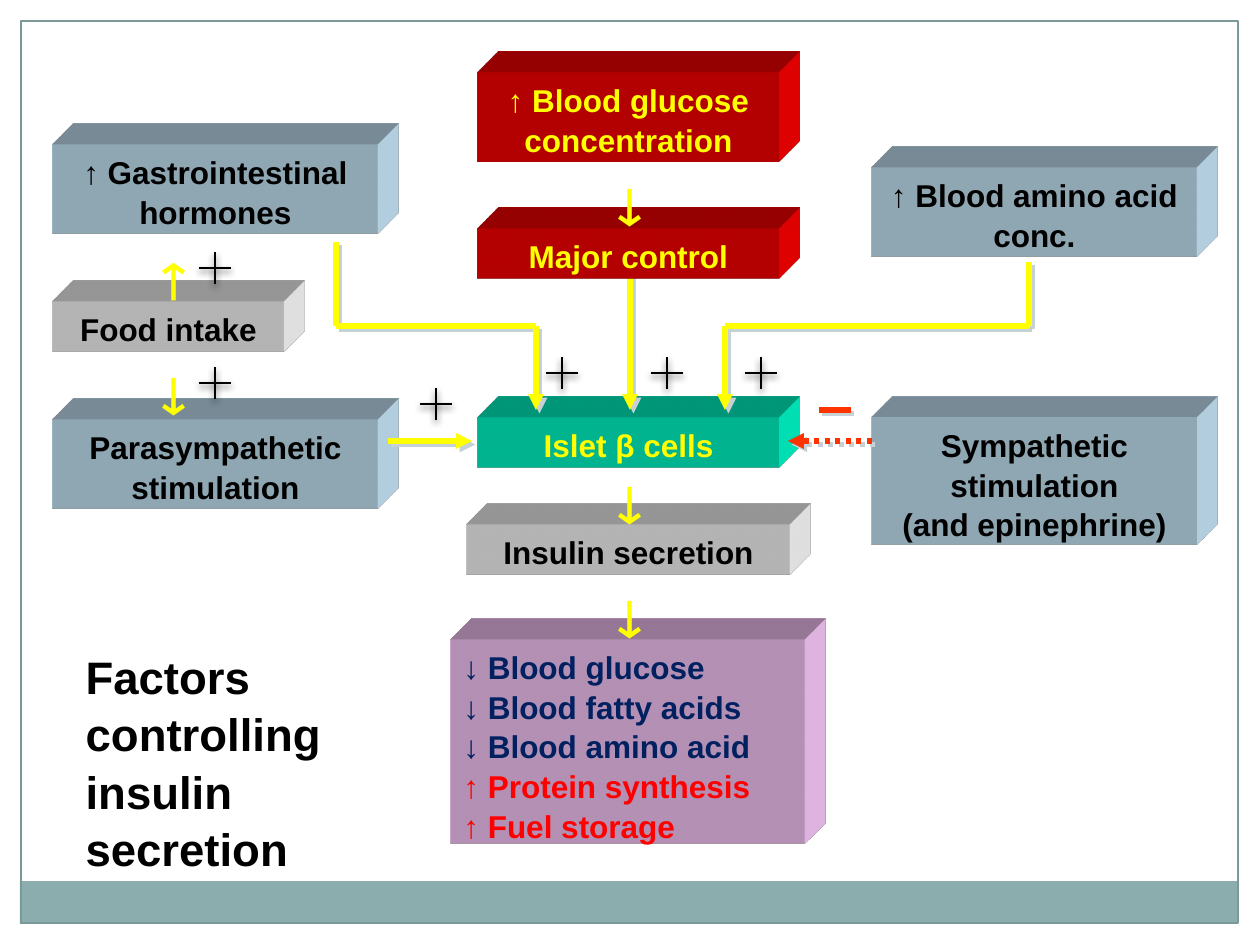
from lxml.etree import SubElement
from pptx import Presentation
from pptx.dml.color import RGBColor
from pptx.enum.dml import MSO_LINE
from pptx.enum.shapes import MSO_CONNECTOR, MSO_SHAPE
from pptx.enum.text import MSO_ANCHOR, MSO_AUTO_SIZE, PP_ALIGN
from pptx.oxml import parse_xml
from pptx.oxml.ns import nsdecls, qn
from pptx.util import Pt

SCALE = 914400 / 126
BLACK, YELLOW, RED, NAVY = "000000", "FFFF00", "FF0000", "002060"
BLUE, WHITE, TEAL, PINK, ORANGE = "CCECFF", "FFFFFF", "00FFCC", "FFCCFF", "FF3300"


def px(*vals):
    return [round(v * SCALE) for v in vals]


def color(code):
    return RGBColor.from_string(code)


def style(frame, hues, size=18, face="Arial", align=PP_ALIGN.LEFT, space=1.05):
    frame.auto_size = MSO_AUTO_SIZE.SHAPE_TO_FIT_TEXT
    frame.vertical_anchor = MSO_ANCHOR.TOP
    for i, para in enumerate(frame.paragraphs):
        para.alignment = align
        para.line_spacing = space
        for run in para.runs:
            run.font.size = Pt(size)
            run.font.name = face
            run.font.bold = True
            run.font.color.rgb = color(hues[i % len(hues)])


def add_rect(slide, area, fill=None, line=None):
    shape = slide.shapes.add_shape(MSO_SHAPE.RECTANGLE, *px(*area))
    shape.shadow.inherit = False
    if fill:
        shape.fill.solid()
        shape.fill.fore_color.rgb = color(fill)
    else:
        shape.fill.background()
    if line:
        shape.line.color.rgb = color(line)
        shape.line.width = Pt(0.75)
    else:
        shape.line.fill.background()
    return shape


def add_block(slide, area, text, fill, hues=(BLACK,), align=PP_ALIGN.CENTER):
    shape = add_rect(slide, area, fill)
    props = shape.element.spPr
    props.append(parse_xml(
        f'<a:scene3d {nsdecls("a")}><a:camera prst="legacyObliqueTopRight"/>'
        '<a:lightRig rig="legacyFlat3" dir="b"/></a:scene3d>'))
    props.append(parse_xml(
        f'<a:sp3d {nsdecls("a")} extrusionH="430200" prstMaterial="legacyMatte">'
        '<a:bevelT w="13500" h="13500" prst="angle"/>'
        '<a:bevelB w="13500" h="13500" prst="angle"/>'
        f'<a:extrusionClr><a:srgbClr val="{fill}"/></a:extrusionClr></a:sp3d>'))
    frame = shape.text_frame
    frame.word_wrap = True
    frame.text = text
    style(frame, hues, align=align)


def add_glyph(slide, left, top, text):
    frame = slide.shapes.add_textbox(*px(left, top, 53, 67)).text_frame
    frame.word_wrap = False
    frame.text = text
    style(frame, (YELLOW,), 26, "TeX Gyre Schola", space=1)


def add_line(shapes, ends, hue=YELLOW, width=3, head=False, dash=None,
             shade=("C5D1D7", 100, 0, 2.8, 45)):
    link = shapes.add_connector(MSO_CONNECTOR.STRAIGHT, *px(*ends))
    link.line.color.rgb = color(hue)
    link.line.width = Pt(width)
    if dash:
        link.line.dash_style = dash
    props = link.element.spPr
    if head:
        SubElement(props.find(qn("a:ln")), qn("a:tailEnd"), type="triangle")
    tint, alpha, blur, dist, angle = shade
    props.append(parse_xml(
        f'<a:effectLst {nsdecls("a")}><a:outerShdw blurRad="{Pt(blur)}" '
        f'dist="{Pt(dist)}" dir="{angle * 60000}" algn="ctr" rotWithShape="0">'
        f'<a:srgbClr val="{tint}"><a:alpha val="{alpha * 1000}"/></a:srgbClr>'
        '</a:outerShdw></a:effectLst>'))


def add_plus(slide, x, y):
    group = slide.shapes.add_group_shape()
    for ends in ((x - 16, y, x + 16, y), (x, y + 16, x, y - 16)):
        add_line(group.shapes, ends, BLACK, 1.57, shade=(BLACK, 45, 4, 2, 90))


def add_title(slide, area, text):
    title = slide.shapes.title
    title.left, title.top, title.width, title.height = px(*area)
    title.text_frame.word_wrap = True
    title.text_frame.text = text
    style(title.text_frame, (BLACK,), 26)


def main():
    deck = Presentation()
    deck.slide_width, deck.slide_height = px(1260, 945)
    slide = deck.slides.add_slide(deck.slide_layouts[5])
    shapes = slide.shapes
    add_title(slide, (73, 640, 305, 232), "Factors controlling insulin secretion")
    add_rect(slide, (20, 881, 1217, 43), "8CADAE")
    add_rect(slide, (21, 21, 1217, 902), line="7C999A")

    add_block(slide, (478, 73, 301, 89), "↑ Blood glucose concentration", RED, (YELLOW,))
    add_block(slide, (478, 418, 301, 50), "Islet β cells", TEAL, (YELLOW,))
    add_block(slide, (467, 525, 323, 50), "Insulin secretion", WHITE)
    add_block(slide, (451, 640, 354, 204),
              "↓ Blood glucose\n↓ Blood fatty acids\n↓ Blood amino acid\n"
              "↑ Protein synthesis\n↑ Fuel storage",
              PINK, (NAVY, NAVY, NAVY, RED, RED), PP_ALIGN.LEFT)
    add_line(shapes, (630, 273, 630, 410), head=True)
    add_block(slide, (478, 229, 301, 50), "Major control", RED, (YELLOW,))
    for top in (580, 466, 168):
        add_glyph(slide, 602, top, "↓")

    for left, top, high, text in (
            (53, 420, 89, "Parasympathetic stimulation"),
            (872, 418, 127, "Sympathetic stimulation\n(and epinephrine)"),
            (53, 145, 89, "↑ Gastrointestinal hormones"),
            (872, 168, 89, "↑ Blood amino acid conc.")):
        add_block(slide, (left, top, 325, high), text, BLUE)
    add_block(slide, (53, 302, 231, 50), "Food intake", WHITE)
    add_glyph(slide, 146, 357, "↓")
    add_glyph(slide, 146, 242, "↑")

    add_line(shapes, (872, 441, 788, 441), ORANGE, head=True, dash=MSO_LINE.ROUND_DOT)
    add_line(shapes, (819, 410, 851, 410), ORANGE)
    add_line(shapes, (388, 441, 472, 441), head=True)
    for side, top, inner in ((1029, 262, 725), (336, 242, 536)):
        add_line(shapes, (side, 326, side, top))
        add_line(shapes, (inner, 326, side, 326))
        add_line(shapes, (inner, 326, inner, 410), head=True)
    for x, y in ((436, 404), (562, 373), (667, 373), (761, 373), (215, 383), (215, 268)):
        add_plus(slide, x, y)
    deck.save("out.pptx")


if __name__ == "__main__":
    main()
